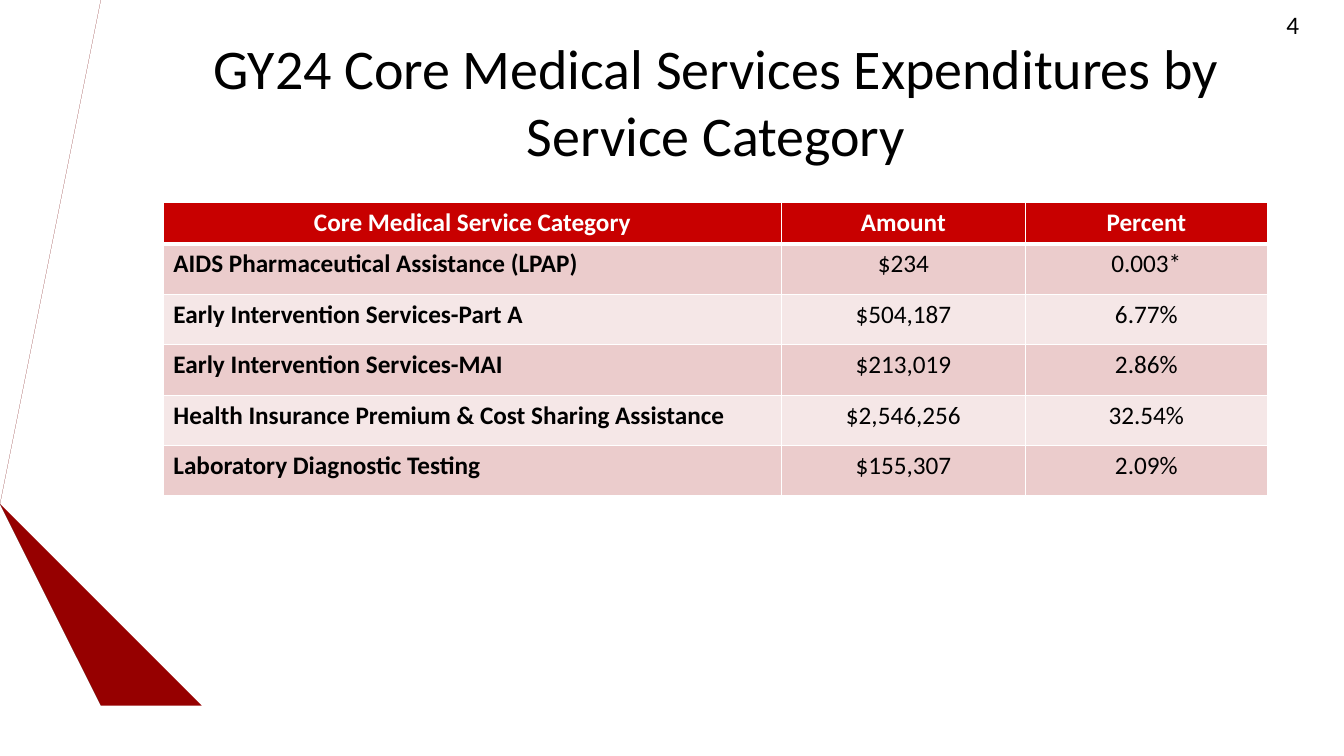
"""Build the slide of core medical service expenditures."""
import dataclasses

import lxml.etree
import pptx
import pptx.dml.color
import pptx.enum.text
import pptx.oxml.ns
import pptx.util

Inches = pptx.util.Inches
Align = pptx.enum.text.PP_ALIGN
Anchor = pptx.enum.text.MSO_ANCHOR


@dataclasses.dataclass
class Band:
    color: str
    points: list[tuple[float, float]]


@dataclasses.dataclass
class Label:
    text: str
    box: tuple[float, float, float, float]
    size: int
    align: Align
    anchor: Anchor


BANDS = [
    Band("C80000", [(0.22, 5.19), (0.4, 5.24), (1.02, 0), (0.84, 0)]),
    Band("595959", [(0.8, 0), (0.62, 0), (0, 5.15), (0.18, 5.18)]),
    Band("960000", [(0.22, 5.2), (1.29, 6.74), (1.74, 6.74), (0.4, 5.24), (0.22, 5.19)]),
    Band("404040", [(1.27, 6.75), (0.22, 5.24), (0.18, 5.18), (0, 5.15), (0.92, 6.75)]),
]
LABELS = [
    Label("4", (12.66, 0.04, 0.67, 0.4), 18, Align.LEFT, Anchor.TOP),
    Label("GY24 Core Medical Services Expenditures by Service Category",
          (1.62, 0.04, 10.96, 1.92), 40, Align.CENTER, Anchor.MIDDLE),
]
ROWS = [
    ("Core Medical Service Category", "Amount", "Percent"),
    ("AIDS Pharmaceutical Assistance (LPAP)", "$234", "0.003*"),
    ("Early Intervention Services-Part A", "$504,187", "6.77%"),
    ("Early Intervention Services-MAI", "$213,019", "2.86%"),
    ("Health Insurance Premium & Cost Sharing Assistance", "$2,546,256", "32.54%"),
    ("Laboratory Diagnostic Testing", "$155,307", "2.09%"),
]
WIDTHS = [6.13, 2.42, 2.4]
HEAD, BODY = 0.41, 0.5


def paint(fill, color: str) -> None:
    fill.solid()
    fill.fore_color.rgb = pptx.dml.color.RGBColor.from_string(color)


def style(par, size: int, color: str, bold: bool, align: Align) -> None:
    par.alignment = align
    par.font.name = "Calibri"
    par.font.size = pptx.util.Pt(size)
    par.font.bold = bold
    paint(par.font.fill, color)


def add_band(slide, band: Band) -> None:
    pen = slide.shapes.build_freeform(*band.points[0], scale=Inches(1))
    pen.add_line_segments(band.points[1:], close=True)
    shape = pen.convert_to_shape()
    shape.shadow.inherit = False
    paint(shape.fill, band.color)
    shape.line.fill.background()


def add_label(slide, label: Label) -> None:
    frame = slide.shapes.add_textbox(*map(Inches, label.box)).text_frame
    frame.word_wrap = True
    frame.vertical_anchor = label.anchor
    frame.text = label.text
    style(frame.paragraphs[0], label.size, "000000", False, label.align)


def add_edge(cell, side: str, width: float) -> None:
    qn = pptx.oxml.ns.qn
    props = cell._tc.get_or_add_tcPr()
    line = lxml.etree.SubElement(props, qn(f"a:ln{side}"), w=str(pptx.util.Pt(width)))
    fill = lxml.etree.SubElement(line, qn("a:solidFill"))
    lxml.etree.SubElement(fill, qn("a:srgbClr"), val="FFFFFF")


def fill_cell(cell, text: str, row: int, col: int) -> None:
    thick = {"T": row == 1, "B": row == 0}
    for side in "LRTB":
        add_edge(cell, side, 3 if thick.get(side) else 1)
    paint(cell.fill, "C80000" if row == 0 else ("F5E7E7", "EBCCCC")[row % 2])
    cell.text = text
    first = row == 0 or col == 0
    align = Align.LEFT if row and col == 0 else Align.CENTER
    style(cell.text_frame.paragraphs[0], 18, "000000" if row else "FFFFFF", first, align)


def add_costs(slide) -> None:
    high = HEAD + BODY * (len(ROWS) - 1)
    box = map(Inches, (1.62, 2.01, sum(WIDTHS), high))
    table = slide.shapes.add_table(len(ROWS), len(WIDTHS), *box).table
    for col, width in enumerate(WIDTHS):
        table.columns[col].width = Inches(width)
    for row, texts in enumerate(ROWS):
        table.rows[row].height = Inches(BODY if row else HEAD)
        for col, text in enumerate(texts):
            fill_cell(table.cell(row, col), text, row, col)


def main() -> None:
    deck = pptx.Presentation()
    deck.slide_width, deck.slide_height = Inches(13.33), Inches(7.5)
    slide = deck.slides.add_slide(deck.slide_layouts[6])
    for band in BANDS:
        add_band(slide, band)
    for label in LABELS:
        add_label(slide, label)
    add_costs(slide)
    deck.save("out.pptx")


if __name__ == "__main__":
    main()
